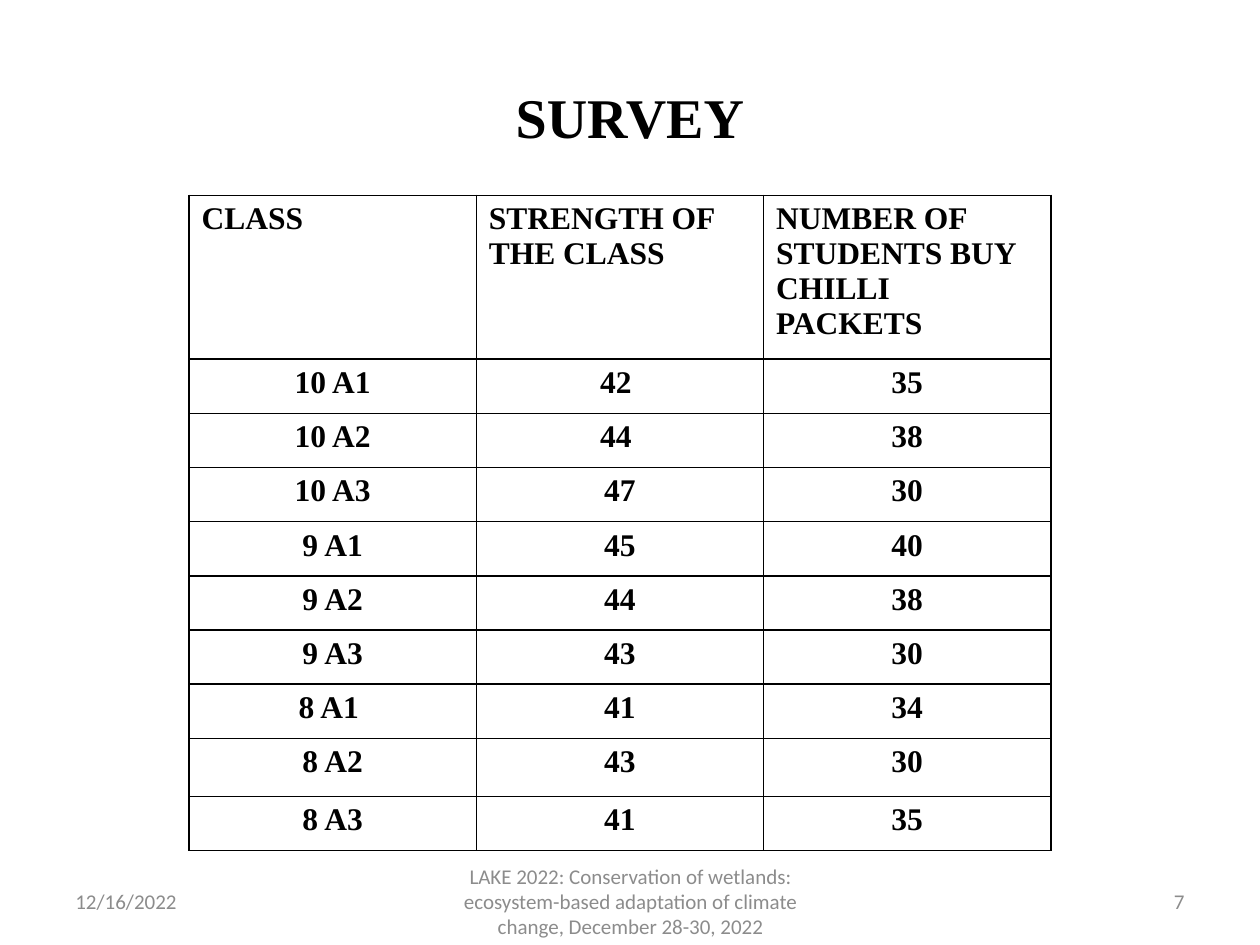
"""Build the class survey slide with its table and footer."""
from lxml import etree
from pptx import Presentation
from pptx.dml.color import RGBColor
from pptx.enum.text import MSO_ANCHOR, PP_ALIGN
from pptx.oxml.ns import qn
from pptx.util import Inches, Pt

LEFT, CENTER, RIGHT = PP_ALIGN.LEFT, PP_ALIGN.CENTER, PP_ALIGN.RIGHT
MIDDLE = MSO_ANCHOR.MIDDLE

THEME = {
    "title": {"size": 32, "font": "Times New Roman", "color": "000000", "bold": True},
    "table": {"size": 18, "font": "Times New Roman", "color": "000000", "bold": True},
    "footer": {"size": 12, "font": "Calibri", "color": "8C8C8C", "bold": False},
    "border": "000000",
}

BOXES = [
    ("SURVEY", "title", CENTER, (0.5, 0.3, 9, 1.25)),
    ("12/16/2022", "footer", LEFT, (0.5, 6.95, 2.33, 0.4)),
    ("LAKE 2022: Conservation of wetlands: ecosystem-based adaptation of "
     "climate change, December 28-30, 2022", "footer", CENTER, (3.42, 6.95, 3.17, 0.4)),
    ("7", "footer", RIGHT, (7.17, 6.95, 2.33, 0.4)),
]

SURVEY = [
    ("CLASS", "STRENGTH OF THE CLASS", "NUMBER OF STUDENTS BUY CHILLI PACKETS"),
    ("10 A1", "42 ", "35"),
    ("10 A2", "44 ", "38"),
    ("10 A3", "47", "30"),
    ("9 A1", "45", "40"),
    ("9 A2", "44", "38"),
    ("9 A3", "43", "30"),
    ("8 A1 ", "41", "34"),
    ("8 A2", "43", "30"),
    ("8 A3", "41", "35"),
]
ROW_HEIGHTS = [0.95] + [0.43] * 7 + [0.46, 0.43]
TABLE_LEFT, TABLE_TOP, COL_WIDTH = 1.5, 1.55, 2.28


def write(tf, text, size, font, color, bold, align=LEFT):
    p = tf.paragraphs[0]
    p.alignment = align
    r = p.add_run()
    r.text = text
    r.font.size = Pt(size)
    r.font.name = font
    r.font.bold = bold
    r.font.color.rgb = RGBColor.from_string(color)


def add_text(s, text, style, align, box):
    tf = s.shapes.add_textbox(*map(Inches, box)).text_frame
    tf.word_wrap = True
    tf.vertical_anchor = MIDDLE
    write(tf, text, align=align, **THEME[style])


def outline(cell):
    pr = cell._tc.get_or_add_tcPr()
    for i, side in enumerate(("lnL", "lnR", "lnT", "lnB")):
        ln = etree.Element(qn(f"a:{side}"), w=str(Pt(1)))
        fill = etree.SubElement(ln, qn("a:solidFill"))
        etree.SubElement(fill, qn("a:srgbClr"), val=THEME["border"])
        pr.insert(i, ln)


def add_survey(s):
    cols = len(SURVEY[0])
    size = (TABLE_LEFT, TABLE_TOP, COL_WIDTH * cols, sum(ROW_HEIGHTS))
    table = s.shapes.add_table(len(SURVEY), cols, *map(Inches, size)).table
    table.first_row = table.horz_banding = False
    for col in table.columns:
        col.width = Inches(COL_WIDTH)
    for i, (values, height) in enumerate(zip(SURVEY, ROW_HEIGHTS)):
        table.rows[i].height = Inches(height)
        for j, value in enumerate(values):
            cell = table.cell(i, j)
            cell.fill.background()
            outline(cell)
            write(cell.text_frame, value, align=CENTER if i else LEFT, **THEME["table"])


def main():
    prs = Presentation()
    prs.slide_width, prs.slide_height = Inches(10), Inches(7.5)
    s = prs.slides.add_slide(prs.slide_layouts[6])
    for box in BOXES:
        add_text(s, *box)
    add_survey(s)
    prs.save("out.pptx")


if __name__ == "__main__":
    main()
